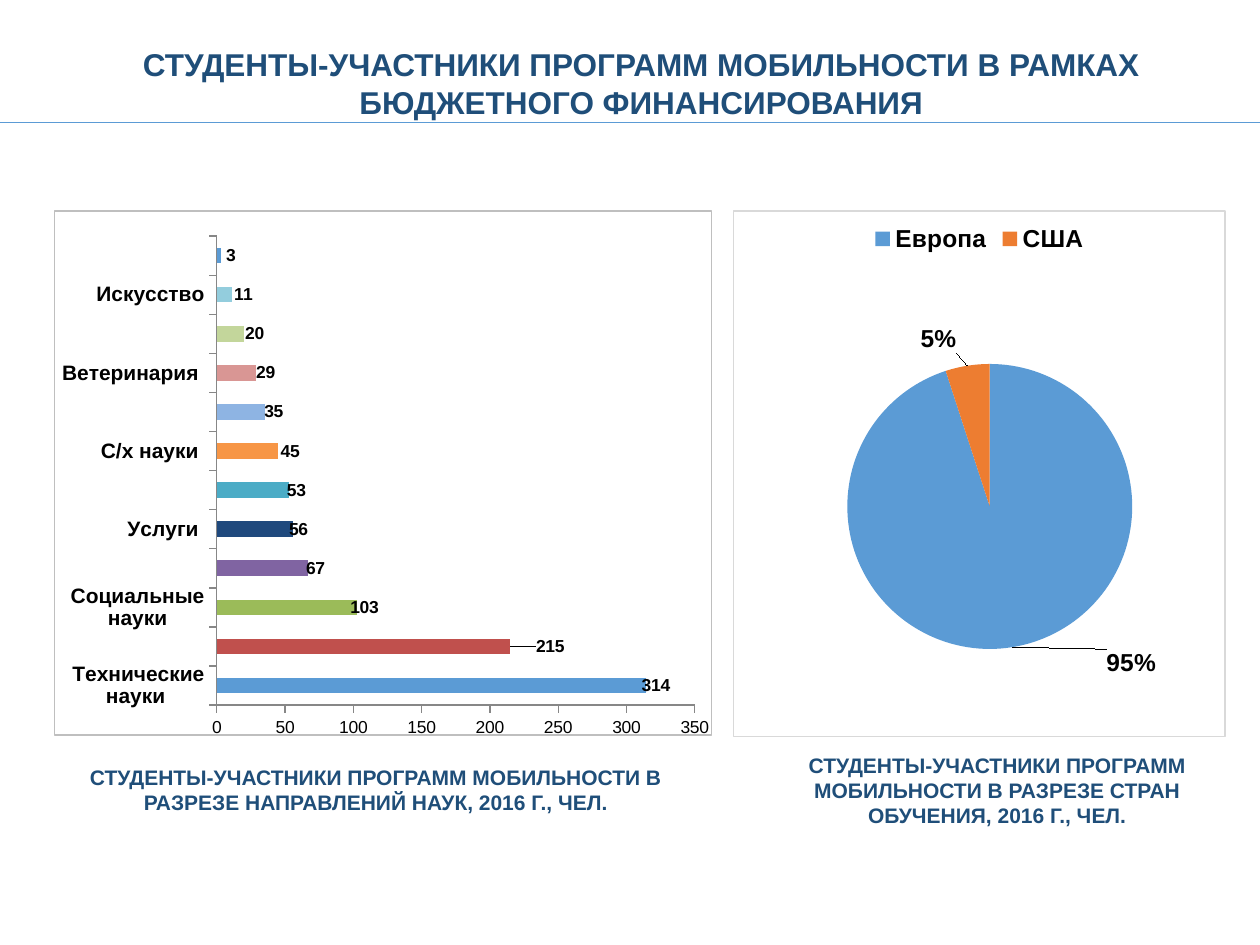
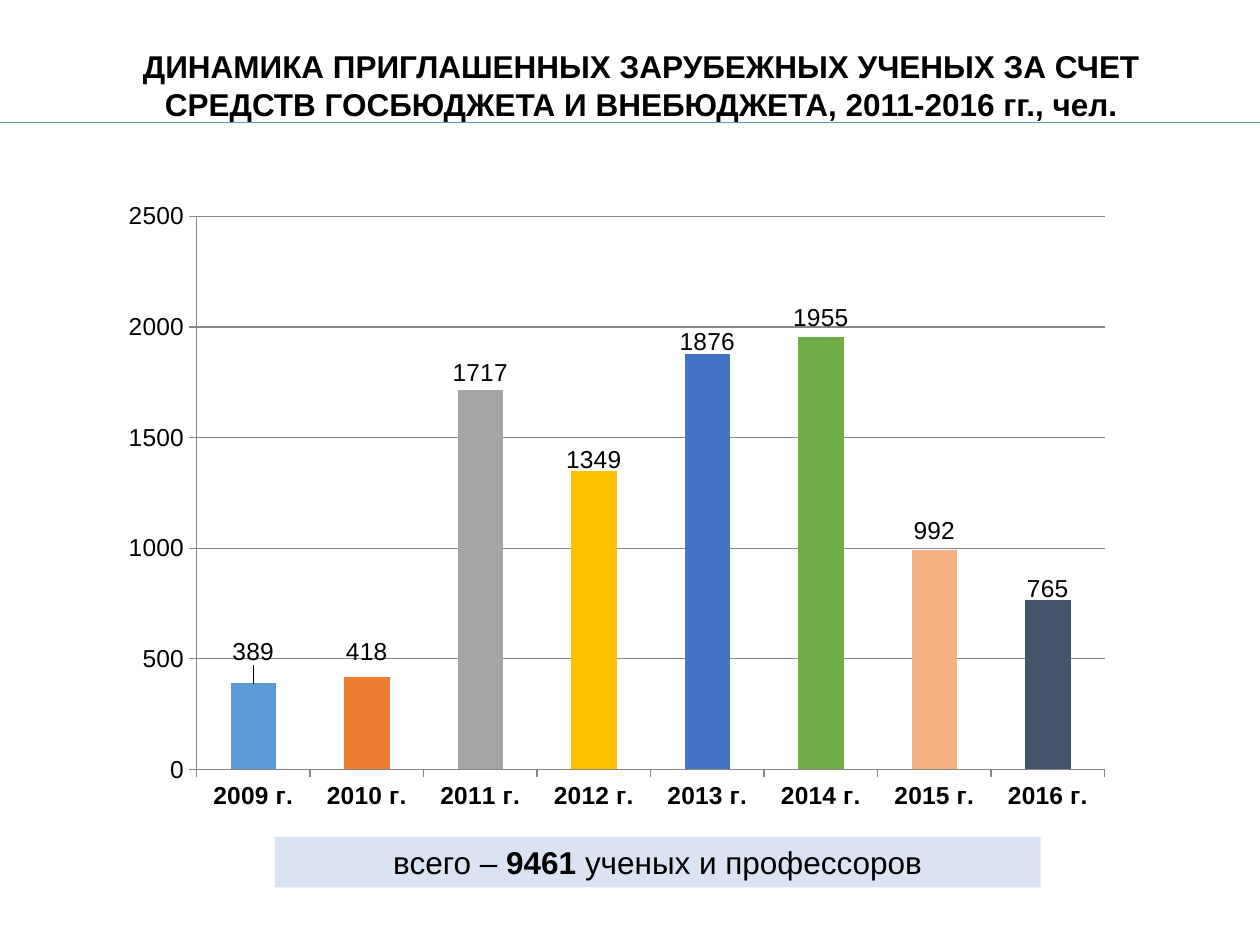
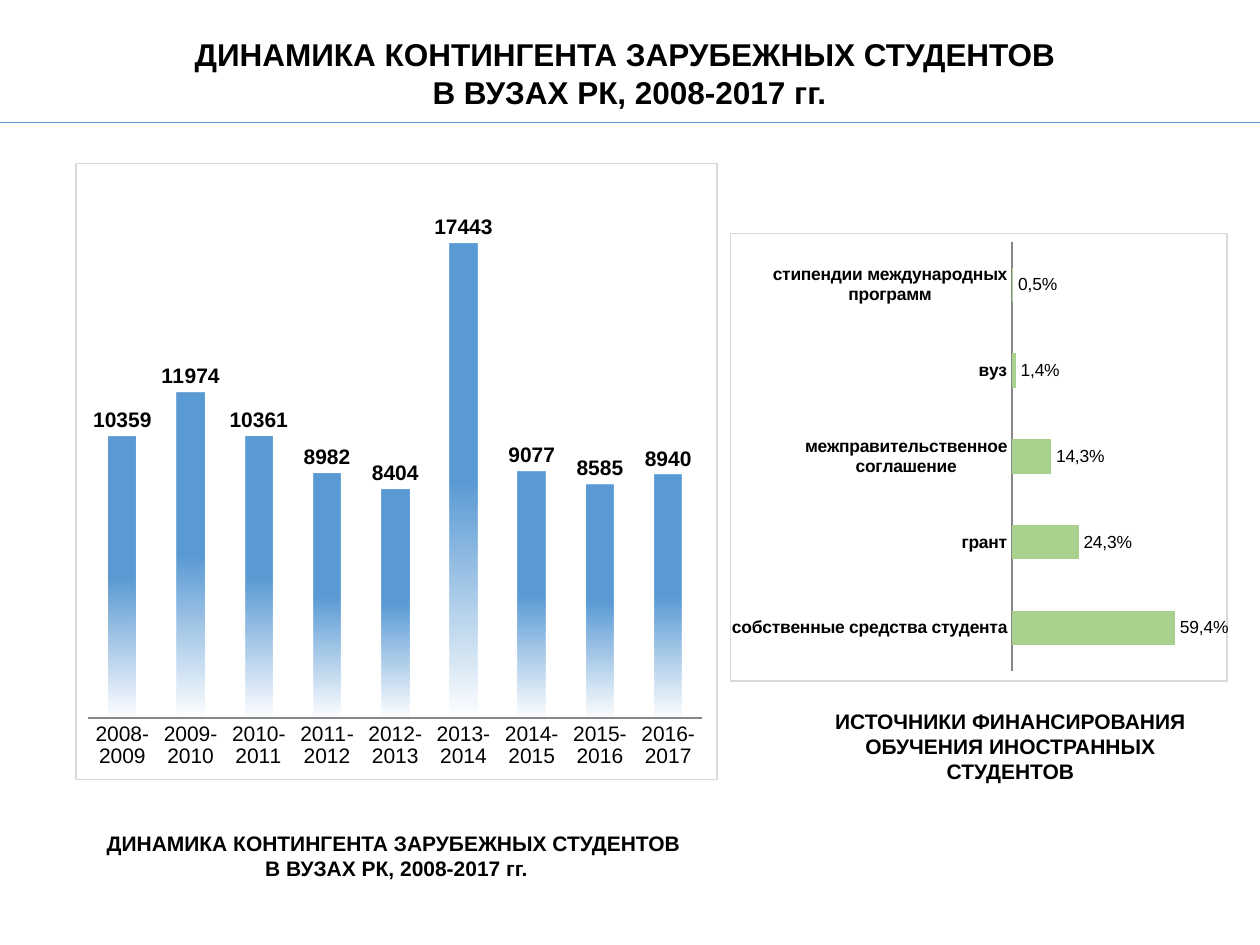
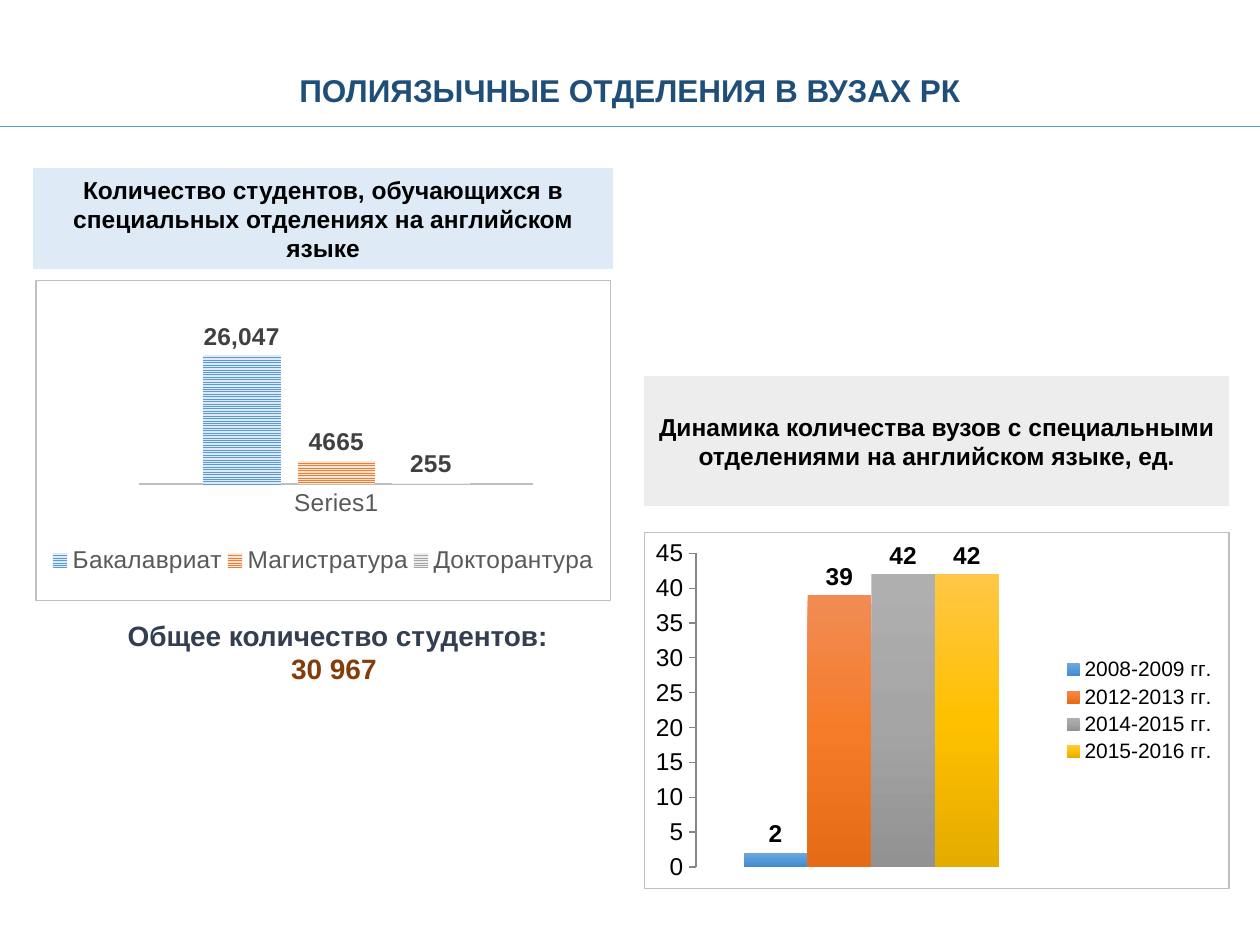
import pptx
import pptx.chart.data
import pptx.dml.color
import pptx.enum.chart
import pptx.enum.dml
import pptx.enum.shapes
import pptx.enum.text
import pptx.oxml
import pptx.oxml.ns
import pptx.util

Cm, Pt = pptx.util.Cm, pptx.util.Pt
CHART = pptx.enum.chart.XL_CHART_TYPE
LABEL = pptx.enum.chart.XL_LABEL_POSITION
LEGEND = pptx.enum.chart.XL_LEGEND_POSITION
TICK = pptx.enum.chart.XL_TICK_MARK
SHAPE = pptx.enum.shapes.MSO_SHAPE
ANCHOR = pptx.enum.text.MSO_ANCHOR
NS = pptx.oxml.ns.nsdecls("a", "c")

FONT = "Arial"
BLACK, WHITE, NAVY = "000000", "FFFFFF", "1F4E79"
BLUE, ORANGE, GREY, GOLD = "5B9BD5", "ED7D31", "A5A5A5", "FFC000"
AXIS, FRAME, PALE_FRAME = "878787", "BFBFBF", "D9D9D9"
TITLE = (1.5, 0.69, 22.86, 1.98)
RULE_Y = 2.46


def rgb(code):
    return pptx.dml.color.RGBColor.from_string(code)


def put(obj, **values):
    for name, value in values.items():
        setattr(obj, name, value)


def set_font(font, size, color=BLACK, bold=False):
    put(font, name=FONT, size=Pt(size), bold=bold)
    font.color.rgb = rgb(color)


def set_line(line, color, width=0.75):
    line.color.rgb = rgb(color)
    line.width = Pt(width)


def paint(fill, color):
    fill.solid()
    fill.fore_color.rgb = rgb(color)


def xml(text):
    return pptx.oxml.parse_xml(text.replace(">", f" {NS}>", 1))


def text_block(slide, box, paragraphs, size, color=BLACK, bold=True,
               shape=SHAPE.ROUNDED_RECTANGLE, fill=None, border=None, anchor=ANCHOR.TOP):
    """Centred text; a paragraph is a string or a list of (text, font overrides)."""
    sp = slide.shapes.add_shape(shape, *map(Cm, box))
    sp.shadow.inherit = False
    if fill:
        paint(sp.fill, fill)
    else:
        sp.fill.background()
    if border:
        set_line(sp.line, border)
    else:
        sp.line.fill.background()
    tf = sp.text_frame
    put(tf, word_wrap=True, vertical_anchor=anchor)
    for i, runs in enumerate(paragraphs):
        p = tf.add_paragraph() if i else tf.paragraphs[0]
        p.alignment = pptx.enum.text.PP_ALIGN.CENTER
        for text, changes in [(runs, {})] if isinstance(runs, str) else runs:
            r = p.add_run()
            r.text = text
            set_font(r.font, **{"size": size, "color": color, "bold": bold, **changes})


def header(slide, box, paragraphs, color=BLACK, rule_y=RULE_Y, **style):
    text_block(slide, box, paragraphs, 18, color, **style)
    line = slide.shapes.add_connector(pptx.enum.shapes.MSO_CONNECTOR.STRAIGHT,
                                      0, Cm(rule_y), Cm(25.4), Cm(rule_y))
    set_line(line.line, BLUE, 0.5)
    line._element.spPr.append(xml("<a:effectLst></a:effectLst>"))


def layout(x, y, w=None, h=None, inner=False):
    """Manual layout: a place when w is given, otherwise a shift."""
    parts = [("layoutTarget", "inner")] if inner else []
    if w is not None:
        parts += [("xMode", "edge"), ("yMode", "edge")]
    body = "".join(f'<c:{tag} val="{val}"/>' for tag, val in parts)
    body += "".join(f'<c:{tag} val="{val}"/>'
                    for tag, val in zip("xywh", (x, y, w, h)) if val is not None)
    return xml(f"<c:layout><c:manualLayout>{body}</c:manualLayout></c:layout>")


def chart_panel(slide, box, kind, cats, series, size, plot, border=None, gap=150, overlap=None):
    data = pptx.chart.data.CategoryChartData()
    data.categories = cats
    for name, vals in series.items():
        data.add_series(name, vals)
    chart = slide.shapes.add_chart(kind, *map(Cm, box), data).chart
    put(chart, has_title=False, has_legend=False)
    set_font(chart.font, size)
    area = chart.element.xpath("c:chart/c:plotArea")[0]
    for old in area.xpath("c:layout"):
        area.remove(old)
    area.insert(0, layout(*plot, inner=True))
    line = (f'<a:ln w="9525"><a:solidFill><a:srgbClr val="{border}"/></a:solidFill></a:ln>'
            if border else "<a:ln><a:noFill/></a:ln>")
    chart.element.xpath("c:chart")[0].addnext(xml(f"<c:spPr><a:noFill/>{line}</c:spPr>"))
    bars = chart.plots[0]
    bars.vary_by_categories = kind == CHART.PIE
    if kind != CHART.PIE:
        bars.gap_width = gap
        if overlap is not None:
            bars.overlap = overlap
        for ser in bars.series:
            ser.invert_if_negative = False
    return chart


def style_axes(chart, size, top, step, cat_bold=False, cat_size=None, cat_color=BLACK,
               cat_line=(AXIS, 0.75), ticks=True, show_values=True, show_cats=True, grid=False):
    cat, val = chart.category_axis, chart.value_axis
    put(cat, visible=show_cats, has_major_gridlines=False)
    put(val, visible=show_values, has_major_gridlines=grid,
        minimum_scale=0, maximum_scale=top, major_unit=step)
    for axis in (cat, val):
        put(axis, major_tick_mark=TICK.OUTSIDE if ticks else TICK.NONE,
            minor_tick_mark=TICK.NONE)
        set_line(axis.format.line, AXIS)
    set_line(cat.format.line, *cat_line)
    set_font(cat.tick_labels.font, cat_size or size, cat_color, cat_bold)
    set_font(val.tick_labels.font, size)
    if grid:
        set_line(val.major_gridlines.format.line, AXIS)


def label_series(ser, size, position=LABEL.OUTSIDE_END, color=BLACK, bold=False, fmt="General"):
    dl = ser.data_labels
    put(dl, show_value=True, position=position, number_format=fmt, number_format_is_linked=False)
    set_font(dl.font, size, color, bold)


def shift_labels(chart, shifts, size, position, bold=False):
    """Moves each point's label by fractions of the chart."""
    points = chart.plots[0].series[0].points
    for i, shift in enumerate(shifts):
        dl = points[i].data_label
        set_font(dl.font, size, bold=bold)
        dl.position = position
        chart.element.xpath(f'.//c:dLbl/c:idx[@val="{i}"]')[0].addnext(layout(*shift))


def paint_points(chart, colors):
    for i, color in enumerate(colors):
        paint(chart.plots[0].series[0].points[i].format.fill, color)


def add_legend(chart, position, size, color=BLACK, bold=False):
    chart.has_legend = True
    put(chart.legend, position=position, include_in_layout=False)
    set_font(chart.legend.font, size, color, bold)


def gradient(chart, i, stops):
    """Vertical gradient of series i; stops are (percent, colour, opacity percent)."""
    body = "".join(f'<a:gs pos="{pos * 1000}"><a:srgbClr val="{color}">'
                   f'<a:alpha val="{alpha * 1000}"/></a:srgbClr></a:gs>'
                   for pos, color, alpha in stops)
    props = chart.element.xpath(".//c:ser")[i].get_or_add_spPr()
    props.insert(0, xml(f'<a:gradFill rotWithShape="1"><a:gsLst>{body}</a:gsLst>'
                        '<a:lin ang="5400000" scaled="0"/></a:gradFill>'))


def science_chart(slide, box):
    fields = {
        "Технические науки ": 314, "Образование ": 215, "Социальные науки": 103,
        "Гуманитарные науки ": 67, "Услуги ": 56, "Здравоохранение ": 53,
        "С/х науки ": 45, "Естественные науки ": 35, "Ветеринария ": 29,
        "Право ": 20, "Искусство": 11, "Военное дело ": 3,
    }
    chart = chart_panel(slide, box, CHART.BAR_STACKED, list(fields),
                        {"Series 1": list(fields.values())}, 10,
                        (0.247, 0.048, 0.728, 0.895), FRAME, overlap=100)
    style_axes(chart, 10, 350, 50, cat_bold=True, cat_size=12)
    paint_points(chart, [BLUE, "C0504D", "9BBB59", "8064A2", "1F497D", "4BACC6",
                         "F79646", "8EB4E3", "D99694", "C3D69B", "93CDDD", BLUE])
    label_series(chart.plots[0].series[0], 10, LABEL.INSIDE_END, bold=True)
    shifts = [0.045, 0.09, 0.04, 0.033, 0.03, 0.033, 0.04, 0.036, 0.036, 0.038, 0.04, 0.03]
    shift_labels(chart, [(dx, 0) for dx in shifts], 10, LABEL.INSIDE_END, True)


def country_pie(slide, box):
    chart = chart_panel(slide, box, CHART.PIE, ["Европа", "США"], {"Series 1": [95, 5]}, 14,
                        (0.231, 0.29, 0.58, 0.545), PALE_FRAME)
    add_legend(chart, LEGEND.TOP, 14, bold=True)
    paint_points(chart, [BLUE, ORANGE])
    label_series(chart.plots[0].series[0], 14, bold=True, fmt="0%")
    shift_labels(chart, [(0.19, -0.01), (-0.02, -0.01)], 14, LABEL.OUTSIDE_END, True)
    for tag, val in (("showVal", "0"), ("showPercent", "1")):
        for flag in chart.element.xpath(f".//c:{tag}"):
            flag.set("val", val)


def mobility_slide(slide):
    header(slide, TITLE, ["СТУДЕНТЫ-УЧАСТНИКИ ПРОГРАММ МОБИЛЬНОСТИ В РАМКАХ "
                          "БЮДЖЕТНОГО ФИНАНСИРОВАНИЯ"], NAVY)
    science_chart(slide, (1.09, 4.24, 13.26, 10.62))
    country_pie(slide, (14.78, 4.24, 9.93, 10.62))
    text_block(slide, (0.81, 15.21, 13.54, 1.42),
               ["СТУДЕНТЫ-УЧАСТНИКИ ПРОГРАММ МОБИЛЬНОСТИ В РАЗРЕЗЕ НАПРАВЛЕНИЙ НАУК, "
                "2016 Г., ЧЕЛ."], 12, NAVY)
    text_block(slide, (14.81, 14.94, 10.59, 1.98),
               ["СТУДЕНТЫ-УЧАСТНИКИ ПРОГРАММ МОБИЛЬНОСТИ В РАЗРЕЗЕ СТРАН ОБУЧЕНИЯ, "
                "2016 Г., ЧЕЛ."], 12, NAVY)


def scholars_chart(slide, box):
    vals = [389, 418, 1717, 1349, 1876, 1955, 992, 765]
    chart = chart_panel(slide, box, CHART.COLUMN_STACKED,
                        [f"{year} г." for year in range(2009, 2017)], {"Series 1": vals}, 14,
                        (0.087, 0.041, 0.893, 0.876), overlap=100)
    style_axes(chart, 14, 2500, 500, cat_bold=True, grid=True)
    paint_points(chart, [BLUE, ORANGE, GREY, GOLD, "4472C4", "70AD47", "F4B183", "44546A"])
    label_series(chart.plots[0].series[0], 14, LABEL.INSIDE_END)
    rises = [0.08, 0.07, 0.056, 0.047, 0.05, 0.06, 0.06, 0.047]
    shift_labels(chart, [(0, -dy) for dy in rises], 14, LABEL.INSIDE_END)


def scholars_slide(slide):
    header(slide, (*TITLE[:3], 2.84),
           ["ДИНАМИКА ПРИГЛАШЕННЫХ ЗАРУБЕЖНЫХ УЧЕНЫХ ЗА СЧЕТ СРЕДСТВ ГОСБЮДЖЕТА "
            "И ВНЕБЮДЖЕТА, 2011-2016 гг., чел."])
    scholars_chart(slide, (2.18, 3.84, 20.5, 12.73))
    text_block(slide, (5.54, 16.87, 15.44, 1.02),
               [[("всего – ", {}), ("9461", {"bold": True}), (" ученых и профессоров", {})]],
               18, bold=False, shape=SHAPE.RECTANGLE, fill="DAE3F3", anchor=ANCHOR.MIDDLE)


def enrolment_chart(slide, box):
    vals = [10359, 11974, 10361, 8982, 8404, 17443, 9077, 8585, 8940]
    chart = chart_panel(slide, box, CHART.COLUMN_CLUSTERED,
                        [f"{year}-{year + 1}" for year in range(2008, 2017)],
                        {"Series 1": vals}, 12, (0.019, 0.018, 0.958, 0.882), PALE_FRAME)
    style_axes(chart, 12, 20000, 5000, ticks=False, show_values=False)
    gradient(chart, 0, [(50, BLUE, 100), (100, BLUE, 0)])
    label_series(chart.plots[0].series[0], 12, bold=True)


def funding_chart(slide, box):
    sources = {
        "собственные средства студента": 0.594, "грант": 0.243,
        "межправительственное соглашение": 0.143, "вуз": 0.014,
        "стипендии международных программ": 0.005,
    }
    chart = chart_panel(slide, box, CHART.BAR_CLUSTERED, list(sources),
                        {"Series 1": list(sources.values())}, 10,
                        (0.567, 0.018, 0.387, 0.96), PALE_FRAME, overlap=-25)
    style_axes(chart, 10, 0.7, 0.1, cat_bold=True, ticks=False, show_values=False)
    ser = chart.plots[0].series[0]
    paint(ser.format.fill, "A9D18E")
    label_series(ser, 10, fmt="0.00%")
    for i, share in enumerate(sources.values()):
        dl = ser.points[i].data_label
        r = dl.text_frame.paragraphs[0].add_run()
        r.text = f"{share:.1%}".replace(".", ",")
        set_font(r.font, 10)
        dl.position = LABEL.OUTSIDE_END


def foreign_students_slide(slide):
    heading = ["ДИНАМИКА КОНТИНГЕНТА ЗАРУБЕЖНЫХ СТУДЕНТОВ ", "В ВУЗАХ РК, 2008-2017 гг."]
    header(slide, (1.96, 0.48, 21.46, 1.98), heading)
    enrolment_chart(slide, (1.52, 3.28, 12.95, 12.45))
    text_block(slide, (1.52, 16.54, 12.95, 1.42), heading, 12)
    funding_chart(slide, (14.71, 4.7, 10.06, 9.04))
    text_block(slide, (16.23, 14.15, 8.28, 1.8),
               ["ИСТОЧНИКИ ФИНАНСИРОВАНИЯ ОБУЧЕНИЯ ИНОСТРАННЫХ СТУДЕНТОВ"], 12,
               shape=SHAPE.RECTANGLE)


def degrees_chart(slide, box):
    degrees = {
        "Бакалавриат": (26047, BLUE, "DEEBF7", "#,##0"),
        "Магистратура": (4665, ORANGE, "FBE5D6", "General"),
        "Докторантура": (255, GREY, "EDEDED", "General"),
    }
    chart = chart_panel(slide, box, CHART.COLUMN_CLUSTERED, ["Series1"],
                        {name: [row[0]] for name, row in degrees.items()}, 14,
                        (0.18, 0.173, 0.686, 0.463), FRAME, gap=164, overlap=-22)
    style_axes(chart, 14, 30000, 5000, cat_color="595959", cat_line=(FRAME, 1.5),
               ticks=False, show_values=False)
    for ser, (_, fore, back, fmt) in zip(chart.plots[0].series, degrees.values()):
        fill = ser.format.fill
        fill.patterned()
        fill.pattern = pptx.enum.dml.MSO_PATTERN.NARROW_HORIZONTAL
        fill.fore_color.rgb, fill.back_color.rgb = rgb(fore), rgb(back)
        label_series(ser, 14, color="404040", bold=True, fmt=fmt)
    add_legend(chart, LEGEND.BOTTOM, 14, "595959")
    legend = chart.element.xpath(".//c:legend")[0]
    for old in legend.xpath("c:layout"):
        legend.remove(old)
    legend.xpath("c:legendPos")[0].addnext(layout(0.02, 0.82, 0.96, 0.11))


def universities_chart(slide, box):
    years = {
        "2008-2009 гг.": (2, "71A6DB", "559BDB", "438AC9"),
        "2012-2013 гг.": (39, "F18C55", "F67B28", "E56B17"),
        "2014-2015 гг.": (42, "AFAFAF", "A5A5A5", "929292"),
        "2015-2016 гг.": (42, "FFC746", "FFC000", "E5AC00"),
    }
    chart = chart_panel(slide, box, CHART.COLUMN_CLUSTERED, ["1"],
                        {name: [row[0]] for name, row in years.items()}, 14,
                        (0.088, 0.059, 0.6, 0.88), FRAME)
    style_axes(chart, 14, 45, 5, show_cats=False)
    for i, (ser, row) in enumerate(zip(chart.plots[0].series, years.values())):
        gradient(chart, i, [(pos, color, 100) for pos, color in zip((0, 50, 100), row[1:])])
        label_series(ser, 14, bold=True)
    add_legend(chart, LEGEND.RIGHT, 12)


def multilingual_slide(slide):
    header(slide, (0, -0.03, 25.4, 3.68), ["ПОЛИЯЗЫЧНЫЕ ОТДЕЛЕНИЯ В ВУЗАХ РК"], NAVY,
           rule_y=2.54, shape=SHAPE.RECTANGLE, anchor=ANCHOR.MIDDLE)
    panel = {"shape": SHAPE.RECTANGLE, "border": WHITE, "anchor": ANCHOR.MIDDLE}
    text_block(slide, (0.66, 3.38, 11.71, 2.06),
               ["Количество студентов, обучающихся в специальных отделениях на английском языке"],
               14, fill="DEEBF7", **panel)
    degrees_chart(slide, (0.71, 5.64, 11.61, 6.48))
    text_block(slide, (2.11, 12.34, 9.4, 1.63),
               [[("Общее количество студентов: ", {}), ("30 967 ", {"color": "843C0B"})]],
               16, "333F50", shape=SHAPE.RECTANGLE)
    text_block(slide, (12.98, 7.57, 11.81, 2.64),
               ["Динамика количества вузов с специальными отделениями на английском языке, ед."],
               14, fill="EDEDED", **panel)
    universities_chart(slide, (12.98, 10.72, 11.81, 7.21))


def main():
    prs = pptx.Presentation()
    put(prs, slide_width=Cm(25.4), slide_height=Cm(19.05))
    for build in (mobility_slide, scholars_slide, foreign_students_slide, multilingual_slide):
        build(prs.slides.add_slide(prs.slide_layouts[6]))
    prs.save("out.pptx")


if __name__ == "__main__":
    main()
